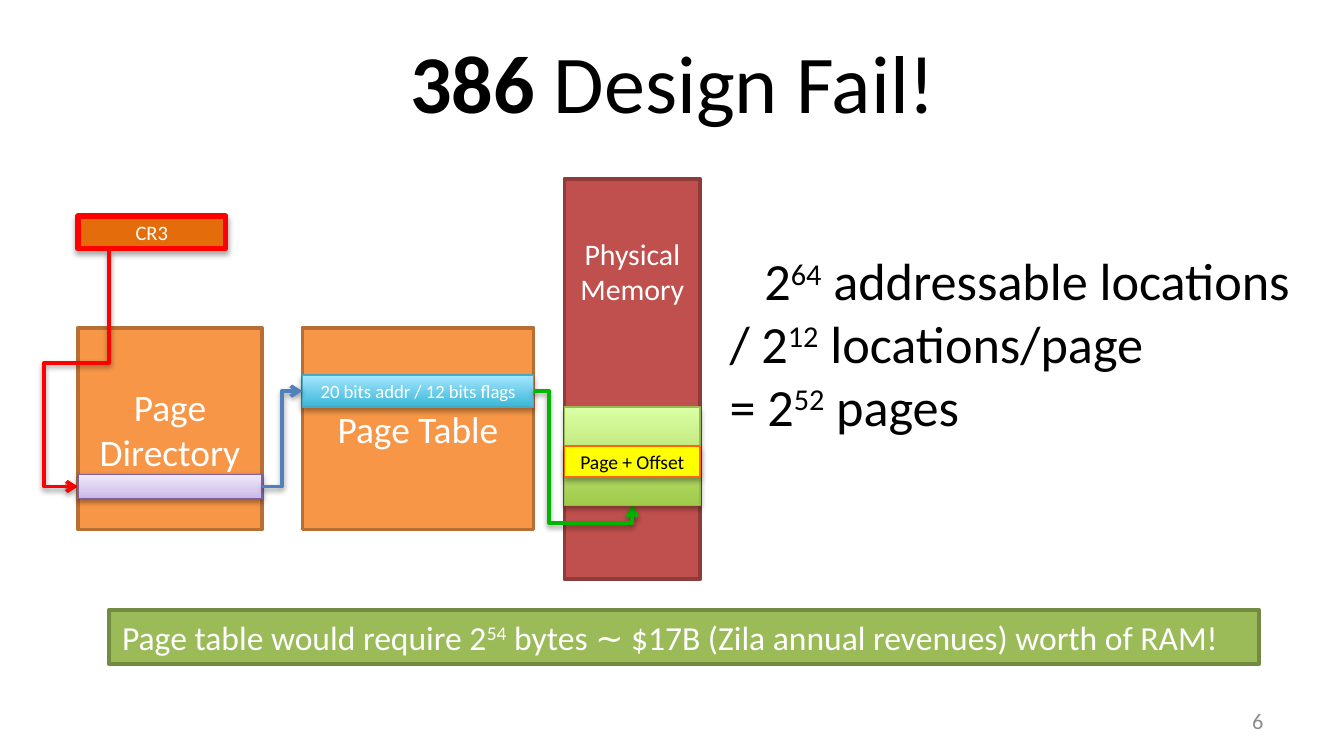
from copy import deepcopy

from lxml.etree import SubElement
from pptx import Presentation
from pptx.dml.color import RGBColor
from pptx.enum.shapes import MSO_CONNECTOR, MSO_SHAPE
from pptx.enum.text import MSO_ANCHOR, PP_ALIGN
from pptx.oxml.ns import qn
from pptx.util import Inches, Pt


def rgb(code):
    """Turn a hex string into a colour."""
    return RGBColor.from_string(code)


def set_values(target, values):
    """Set each named attribute on the target."""
    for name, value in values.items():
        setattr(target, name, value)


def place(shape, box):
    """Move and size a shape to a box in inches."""
    names = ("left", "top", "width", "height")
    set_values(shape, dict(zip(names, map(Inches, box))))


def add_span(para, text, size, color="000000", **values):
    """Add one formatted run to a paragraph."""
    span = para.add_run()
    span.text = text
    set_values(span.font, {"name": "Calibri", "size": Pt(size), **values})
    span.font.color.rgb = rgb(color)
    return span


def write(frame, lines, size, color="000000", align=PP_ALIGN.LEFT, **values):
    """Fill a frame with lines; text between carets is superscript."""
    set_values(frame, {"word_wrap": True, "vertical_anchor": MSO_ANCHOR.MIDDLE, **values})
    for number, line in enumerate(lines):
        para = frame.add_paragraph() if number else frame.paragraphs[0]
        para.alignment = align
        for index, text in enumerate(line.split("^")):
            span = add_span(para, text, size, color)
            if index % 2:
                span._r.get_or_add_rPr().set("baseline", "30000")


def add_shadow(effects, opacity, distance):
    """Put a soft downward shadow in an effect list."""
    shadow = SubElement(effects, qn("a:outerShdw"), blurRad=str(Pt(3.1)),
                        dist=str(Pt(distance)), dir="5400000", rotWithShape="0")
    color = SubElement(shadow, qn("a:srgbClr"), val="000000")
    SubElement(color, qn("a:alpha"), val=str(opacity * 1000))


def fill_gradient(shape, stops):
    """Fill a shape with a gradient rising from its bottom edge."""
    shape.fill.gradient()
    shape.fill.gradient_angle = 90
    stop_list = shape.element.spPr.find(".//" + qn("a:gsLst"))
    while len(stop_list) < len(stops):
        stop_list.append(deepcopy(stop_list[0]))
    for stop, (position, color) in zip(shape.fill.gradient_stops, stops):
        stop.position = position
        stop.color.rgb = rgb(color)


def add_block(page, box, fill, line, width, shadow=None):
    """Add a rectangle with a solid or gradient fill."""
    block = page.shapes.add_shape(MSO_SHAPE.RECTANGLE, *map(Inches, box))
    if isinstance(fill, str):
        block.fill.solid()
        block.fill.fore_color.rgb = rgb(fill)
    else:
        fill_gradient(block, fill)
    block.line.color.rgb = rgb(line)
    block.line.width = Pt(width)
    block.shadow.inherit = False
    if shadow:
        add_shadow(block.element.spPr.find(qn("a:effectLst")), *shadow)
    return block


def add_elbow(page, start, end, color, adjust=(), turned=False):
    """Add a bent arrow; a turned one leaves its start downwards."""
    if turned:
        middle_x, middle_y = (start[0] + end[0]) / 2, (start[1] + end[1]) / 2
        half_x, half_y = (end[1] - start[1]) / 2, (start[0] - end[0]) / 2
        start = middle_x - half_x, middle_y - half_y
        end = middle_x + half_x, middle_y + half_y
    arrow = page.shapes.add_connector(MSO_CONNECTOR.ELBOW, *map(Inches, start + end))
    arrow.line.color.rgb = rgb(color)
    arrow.line.width = Pt(2)
    outline = arrow.element.spPr
    if turned:
        outline.find(qn("a:xfrm")).set("rot", "5400000")
    if adjust:
        geometry = outline.find(qn("a:prstGeom"))
        geometry.set("prst", "bentConnector4")
        for number, share in enumerate(adjust, 1):
            SubElement(geometry.find(qn("a:avLst")), qn("a:gd"), name=f"adj{number}",
                       fmla=f"val {round(share * 100000)}")
    SubElement(outline.find(qn("a:ln")), qn("a:tailEnd"), type="arrow")
    add_shadow(SubElement(outline, qn("a:effectLst")), 38, 1.6)


def add_title(page, box):
    """Place the title with its bold number."""
    title = page.shapes.title
    place(title, box)
    title.text_frame.vertical_anchor = MSO_ANCHOR.MIDDLE
    para = title.text_frame.paragraphs[0]
    para.alignment = PP_ALIGN.CENTER
    add_span(para, "386", 44, bold=True)
    add_span(para, " Design Fail!", 44, bold=False)


def add_paging_diagram(page, left, top):
    """Draw the walk from CR3 through both tables to memory."""
    def block(box, *style, text="", size=10, color="FFFFFF", **values):
        """Add a centred label block relative to the diagram."""
        x, y, width, height = box
        shape = add_block(page, (left + x, top + y, width, height), *style)
        if text:
            write(shape.text_frame, [text], size, color, PP_ALIGN.CENTER, **values)

    def elbow(start, end, *style, **values):
        """Add a bent arrow relative to the diagram."""
        points = [(left + x, top + y) for x, y in (start, end)]
        add_elbow(page, *points, *style, **values)

    strong, light = (35, 1.8), (38, 1.6)
    table_style = ("F79646", "B76F34", 2)
    directory_width, table_left, table_width = 1.37, 1.67, 1.72
    memory_left, memory_width = 3.62, 1.01
    table_right = table_left + table_width
    entry_y, address_y, frame_bottom = 2.29, 1.58, 2.43

    block((0, 0.28, 1.1, 0.24), "E46C0A", "FF0000", 3, strong, text="CR3", size=11)
    block((0, 1.11, directory_width, 1.5), *table_style, text="Page Directory", size=20)
    block((table_left, 1.11, table_width, 1.5), *table_style, text="Page Table", size=20)
    block((memory_left, 0, memory_width, 2.98), "C0504D", "8E3B39", 2,
          text="Physical Memory", size=16,
          vertical_anchor=MSO_ANCHOR.TOP, margin_top=Inches(0.42))
    elbow((0.23, 0.54), (0, entry_y), "FF0000", (0.474, 2.092), turned=True)
    block((0, entry_y - 0.09, directory_width, 0.18),
          [(0, "C9B5E8"), (0.35, "D8CBEE"), (1, "F0EAF9")], "7D60A0", 0.75, light)
    block((table_left, address_y - 0.12, table_width, 0.24),
          [(0, "39B7D8"), (1, "A7E6FF")], "46AAC5", 0.75, strong,
          text="20 bits addr / 12 bits flags")
    elbow((directory_width, entry_y), (table_left, address_y), "4F81BD")
    elbow((table_right, address_y), (memory_left + memory_width / 2, frame_bottom),
          "00B501", (0.16, 1.155))
    block((memory_left, frame_bottom - 0.73, memory_width, 0.73),
          [(0, "A0CA4A"), (1, "DAFFA5")], "98B955", 0.75, strong)
    block((memory_left, 1.99, memory_width, 0.23), "FFFF00", "FF6600", 0.75, strong,
          text="Page + Offset", size=10.5, color="000000")


def add_page_count(page, box):
    """Write the division that gives the number of pages."""
    frame = page.shapes.add_textbox(*map(Inches, box)).text_frame
    lines = ["2^64^ addressable locations", "/ 2^12^ locations/page", "= 2^52^ pages"]
    write(frame, lines, 28, vertical_anchor=MSO_ANCHOR.TOP)
    frame.paragraphs[0]._p.get_or_add_pPr().set("indent", str(Inches(0.26)))


def add_conclusion(page, box):
    """Add the green bar with the cost of the table."""
    bar = add_block(page, box, "9BBB59", "738A42", 2)
    line = "Page table would require 2^54^ bytes ∼ $17B (Zila annual revenues) worth of RAM!"
    write(bar.text_frame, [line], 18, "FFFFFF", word_wrap=False)


def add_page_number(page, box):
    """Write the page number at the lower right."""
    frame = page.shapes.add_textbox(*map(Inches, box)).text_frame
    write(frame, ["6"], 12, "8C8C8C", PP_ALIGN.RIGHT)


def main():
    """Build the deck and save it."""
    deck = Presentation()
    set_values(deck, {"slide_width": Inches(10), "slide_height": Inches(10 * 9 / 16)})
    page = deck.slides.add_slide(deck.slide_layouts[5])
    add_title(page, (0.51, 0.13, 9, 0.94))
    add_page_number(page, (7.17, 5.21, 2.33, 0.3))
    add_paging_diagram(page, 0.58, 1.33)
    add_page_count(page, (5.33, 1.8, 4.56, 1.51))
    add_conclusion(page, (0.81, 4.54, 8.56, 0.4))
    deck.save("out.pptx")


if __name__ == "__main__":
    main()
